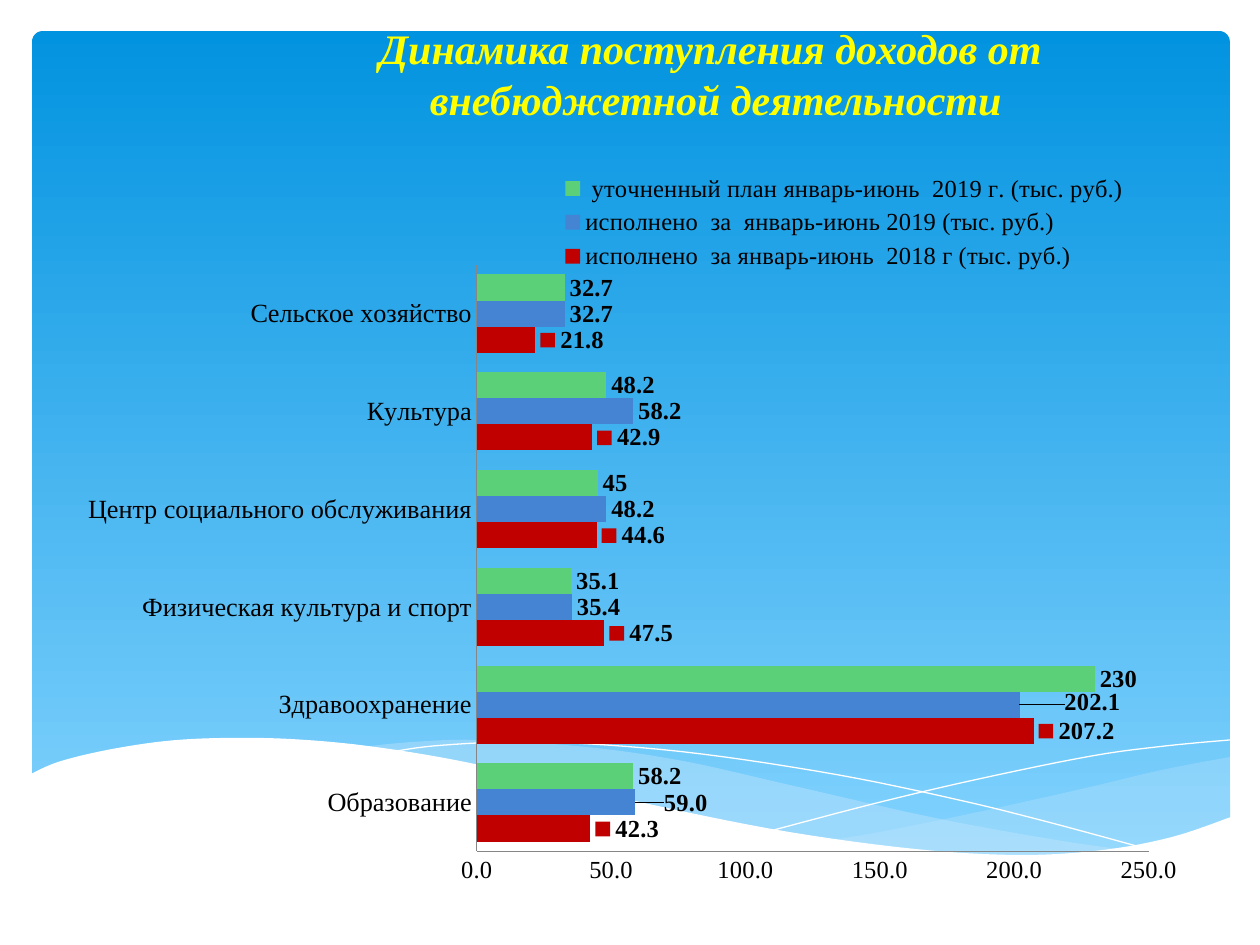
from lxml import etree
from pptx import Presentation
from pptx import util as u
from pptx.chart import data as chart_data
from pptx.dml import color
from pptx.enum import chart as charts, shapes, text
from pptx.oxml import ns

COLORS = {
    "sky_top": "0293E0", "sky_bottom": "83D3FE", "wave": "C6E7FC",
    "white": "FFFFFF", "title": "FFFF00", "text": "000000", "axis": "868686",
    "red": "C00000", "blue": "4584D3", "green": "5BD078",
}
SERIF = "Times New Roman"
DECIMAL = "#,##0.0"

CATEGORIES = ["Образование", "Здравоохранение", "Физическая культура и спорт",
              "Центр социального обслуживания", "Культура", "Сельское хозяйство"]
# name, values, colour, label format, legend key in labels, moved labels
SERIES = [
    ("исполнено  за январь-июнь  2018 г (тыс. руб.)",
     [42.3, 207.2, 47.5, 44.6, 42.9, 21.8], "red", DECIMAL, True, {}),
    ("исполнено  за  январь-июнь 2019 (тыс. руб.)",
     [59, 202.1, 35.4, 48.2, 58.2, 32.7], "blue", DECIMAL, False,
     {0: (0.021, 0), 1: (0.035, -0.003)}),
    (" уточненный план январь-июнь  2019 г. (тыс. руб.)",
     [58.2, 230, 35.1, 45, 48.2, 32.7], "green", "General", False, {}),
]

# Knots of the wave edges, in px
RIGHT_WAVE = [
    [(1230, 757), (1162, 770), (1086, 788), (983, 811), (891, 830), (834, 840)],
    [(834, 840), (924, 852), (1027, 857), (1100, 852), (1162, 840), (1231, 818)],
]
MIDDLE_WAVE = [
    [(1126, 850), (1056, 840), (935, 818), (794, 786), (683, 761), (586, 747),
     (479, 740), (413, 742), (362, 747)],
    [(362, 747), (457, 761), (567, 786), (714, 819), (820, 839), (929, 853),
     (1018, 857), (1082, 855), (1126, 850)],
]
FALLING_LINE = [(391, 752), (433, 746), (507, 742), (591, 744), (702, 754),
                (839, 775), (959, 800), (1048, 822), (1144, 848)]
RISING_LINE = [(774, 830), (877, 803), (979, 779), (1092, 756), (1166, 746), (1230, 740)]
WHITE_WAVE = [
    [(1231, 817), (1172, 837), (1103, 850), (1019, 855), (915, 849), (789, 832),
     (667, 808), (563, 784), (460, 761), (368, 746), (290, 739), (223, 738),
     (166, 741), (107, 750), (58, 762), (29, 775)],
    [(29, 921), (1231, 921)],
]


def emu(px):
    return round(px * 914400 / 126)


def rgb(name):
    return color.RGBColor.from_string(COLORS[name])


def apply(target, values):
    for key, value in values.items():
        setattr(target, key, value)


def smooth(knots, steps=6):
    """Catmull-Rom curve through the knots; two knots stay a straight line."""
    if len(knots) < 3:
        return knots
    ends = [knots[0], *knots, knots[-1]]
    points = [knots[0]]
    for a, b, c, d in zip(ends, ends[1:], ends[2:], ends[3:]):
        for step in range(1, steps + 1):
            t = step / steps
            points.append(tuple(
                (2 * q + (r - p) * t + (2 * p - 5 * q + 4 * r - s) * t ** 2
                 + (3 * q - p - 3 * r + s) * t ** 3) / 2
                for p, q, r, s in zip(a, b, c, d)))
    return points


def place(parent, index, **values):
    """Give a chart part a manual layout in fractions of the chart."""
    for old in parent.findall(ns.qn("c:layout")):
        parent.remove(old)
    layout = etree.Element(ns.qn("c:layout"))
    manual = etree.SubElement(layout, ns.qn("c:manualLayout"))
    for key, value in values.items():
        etree.SubElement(manual, ns.qn(f"c:{key}")).set("val", str(value))
    parent.insert(index, layout)


class Slide:
    def __init__(self, deck):
        self.page = deck.slides.add_slide(deck.slide_layouts[6])

    def font(self, target, size, tint="text", **more):
        apply(target, {"name": SERIF, "size": u.Pt(size), **more})
        target.color.rgb = rgb(tint)

    def panel(self, left, top, width, height):
        panel = self.page.shapes.add_shape(
            shapes.MSO_SHAPE.ROUNDED_RECTANGLE, *map(emu, (left, top, width, height)))
        panel.adjustments[0] = 0.013
        panel.shadow.inherit = False
        panel.line.fill.background()
        panel.fill.gradient()
        panel.fill.gradient_angle = 270
        for stop, name, position in zip(panel.fill.gradient_stops,
                                        ("sky_top", "sky_bottom"), (0, 1)):
            stop.color.rgb = rgb(name)
            stop.position = position

    def outline(self, edges, closed):
        points = [(emu(x), emu(y)) for edge in edges for x, y in smooth(edge)]
        builder = self.page.shapes.build_freeform(*points[0])
        builder.add_line_segments(points[1:], close=closed)
        shape = builder.convert_to_shape()
        shape.shadow.inherit = False
        return shape

    def wave(self, edges, tint, opacity=100):
        shape = self.outline(edges, True)
        shape.line.fill.background()
        shape.fill.solid()
        shape.fill.fore_color.rgb = rgb(tint)
        if opacity < 100:
            tone = shape.fill._xPr.find(".//" + ns.qn("a:srgbClr"))
            etree.SubElement(tone, ns.qn("a:alpha")).set("val", str(opacity * 1000))

    def curve(self, knots):
        shape = self.outline([knots], False)
        shape.fill.background()
        shape.line.color.rgb = rgb("white")
        shape.line.width = 0

    def title(self, lines, left, top, width, height):
        box = self.page.shapes.add_textbox(*map(emu, (left, top, width, height)))
        frame = box.text_frame
        apply(frame, {"word_wrap": True, "vertical_anchor": text.MSO_ANCHOR.BOTTOM})
        for index, line in enumerate(lines):
            para = frame.add_paragraph() if index else frame.paragraphs[0]
            para.alignment = text.PP_ALIGN.CENTER
            span = para.add_run()
            span.text = line
            self.font(span.font, 24, "title", bold=True, italic=True)

    def bar_chart(self, left, top, width, height):
        data = chart_data.CategoryChartData()
        data.categories = CATEGORIES
        for name, values, _, fmt, *_ in SERIES:
            data.add_series(name, values, fmt)
        chart = self.page.shapes.add_chart(
            charts.XL_CHART_TYPE.BAR_CLUSTERED,
            *map(emu, (left, top, width, height)), data).chart
        apply(chart, {"has_title": False, "has_legend": True})
        self.font(chart.font, 18, name="Calibri")
        plot = chart.plots[0]
        apply(plot, {"gap_width": 75, "overlap": 0, "vary_by_categories": False})
        place(chart._chartSpace.find(".//" + ns.qn("c:plotArea")), 0,
              layoutTarget="inner", xMode="edge", yMode="edge",
              x=0.365, y=0.175, w=0.594, h=0.762)

        # Legend
        apply(chart.legend, {"position": charts.XL_LEGEND_POSITION.TOP,
                             "include_in_layout": False})
        self.font(chart.legend.font, 14)
        place(chart.legend._element, 1, xMode="edge", yMode="edge",
              x=0.43, y=0.05, w=0.52, h=0.14)

        # Axes
        for axis, size in ((chart.category_axis, 15), (chart.value_axis, 14)):
            apply(axis, {"has_major_gridlines": False,
                         "major_tick_mark": charts.XL_TICK_MARK.NONE,
                         "minor_tick_mark": charts.XL_TICK_MARK.NONE})
            self.font(axis.tick_labels.font, size)
            axis.format.line.color.rgb = rgb("axis")
        apply(chart.value_axis, {"minimum_scale": 0, "maximum_scale": 250, "major_unit": 50})
        apply(chart.value_axis.tick_labels,
              {"number_format": DECIMAL, "number_format_is_linked": False})

        # Bars and their labels
        outside = charts.XL_LABEL_POSITION.OUTSIDE_END
        for series, (_, _, tint, fmt, key, moved) in zip(plot.series, SERIES):
            series.format.fill.solid()
            series.format.fill.fore_color.rgb = rgb(tint)
            labels = series.data_labels
            apply(labels, {"show_value": True, "show_legend_key": key, "position": outside,
                           "number_format": fmt, "number_format_is_linked": False})
            self.font(labels.font, 14, bold=True)
            for index, (x, y) in moved.items():
                label = series.points[index].data_label
                label.position = outside
                self.font(label.font, 14, bold=True)
                element = label._dLbl
                place(element, 1, x=x, y=y)
                number = etree.Element(ns.qn("c:numFmt"), formatCode=fmt, sourceLinked="0")
                element.insert(2, number)


def main():
    deck = Presentation()
    apply(deck, {"slide_width": emu(1260), "slide_height": emu(945)})
    slide = Slide(deck)
    # Backdrop
    slide.panel(32, 31, 1198, 832)
    slide.wave(RIGHT_WAVE, "wave", 29)
    slide.wave(MIDDLE_WAVE, "wave", 40)
    slide.curve(FALLING_LINE)
    slide.curve(RISING_LINE)
    slide.wave(WHITE_WAVE, "white")
    # Content
    slide.title(["Динамика поступления доходов от", " внебюджетной деятельности"],
                115, 57, 1191, 73)
    slide.bar_chart(64, 130, 1131, 770)
    deck.save("out.pptx")


if __name__ == "__main__":
    main()
